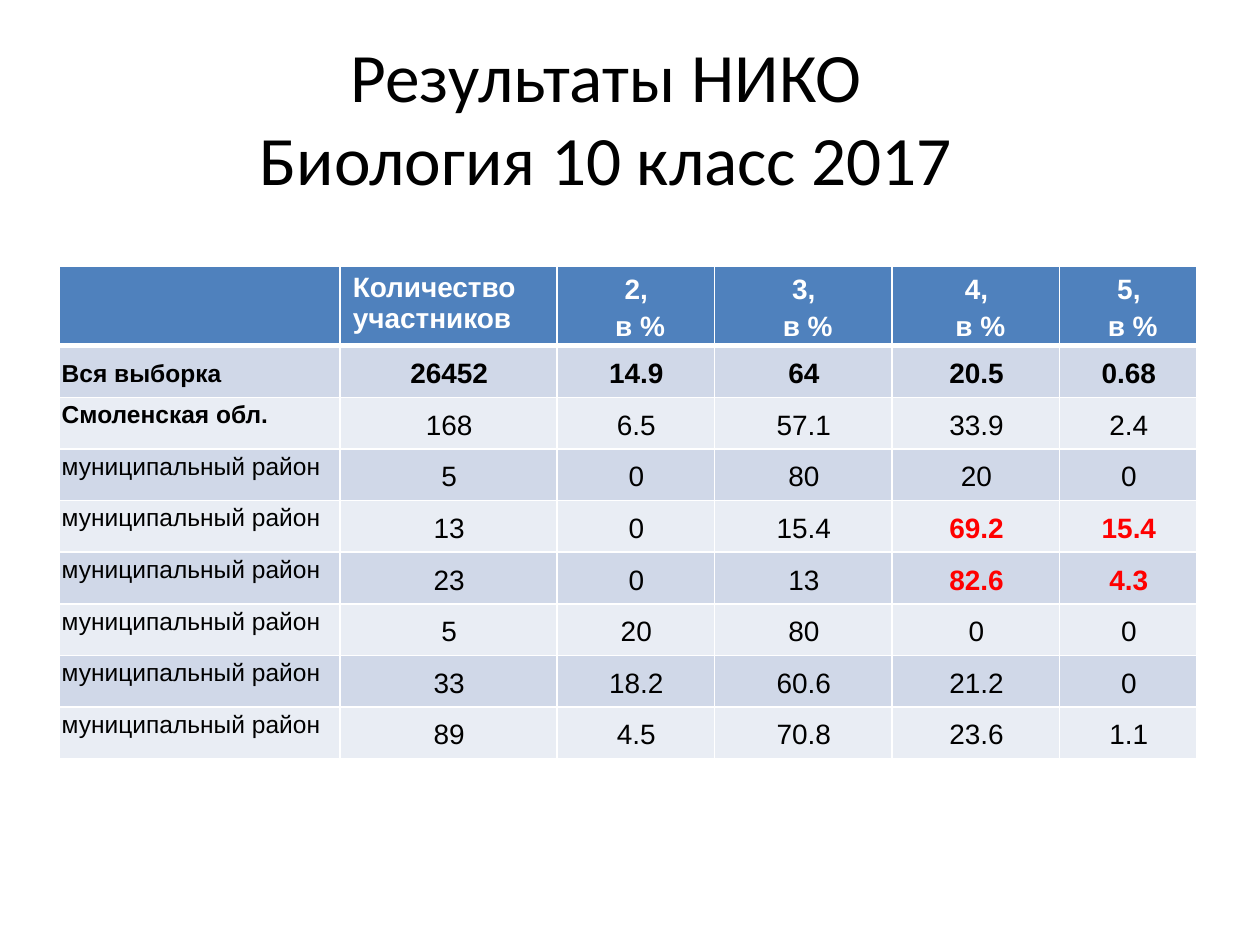
from lxml import etree
from pptx import Presentation
from pptx.dml.color import RGBColor
from pptx.enum.text import MSO_ANCHOR, PP_ALIGN
from pptx.oxml.ns import qn
from pptx.util import Inches, Pt

BLACK = RGBColor(0, 0, 0)
WHITE = RGBColor(255, 255, 255)
RED = RGBColor(255, 0, 0)
BLUE = RGBColor(0x4F, 0x81, 0xBD)
BAND_DARK = RGBColor(0xD0, 0xD8, 0xE8)
BAND_LIGHT = RGBColor(0xE9, 0xED, 0xF4)

DISTRICT = "муниципальный район"
COL_WIDTHS = [2.23, 1.72, 1.25, 1.41, 1.33, 1.09]
ROW_HEIGHT = 0.41
HEADER = ["", "Количество участников"] + [f"{grade},\n в %" for grade in range(2, 6)]
ROWS = [
    ["Вся выборка", "26452", "14.9", "64", "20.5", "0.68"],
    ["Смоленская обл.", "168", "6.5", "57.1", "33.9", "2.4"],
    [DISTRICT, "5", "0", "80", "20", "0"],
    [DISTRICT, "13", "0", "15.4", "69.2", "15.4"],
    [DISTRICT, "23", "0", "13", "82.6", "4.3"],
    [DISTRICT, "5", "20", "80", "0", "0"],
    [DISTRICT, "33", "18.2", "60.6", "21.2", "0"],
    [DISTRICT, "89", "4.5", "70.8", "23.6", "1.1"],
]
RED_CELLS = {(4, 4), (4, 5), (5, 4), (5, 5)}


def add_run(p, text, size, font, color, bold=False):
    """Add one formatted run to a paragraph."""
    r = p.add_run()
    r.text = text
    r.font.size = Pt(size)
    r.font.name = font
    r.font.bold = bold
    r.font.color.rgb = color


def set_borders(cell, bottom):
    """Draw white borders, with the bottom one of the given width in points."""
    tcPr = cell._tc.get_or_add_tcPr()
    for side, width in (("L", 1), ("R", 1), ("T", 1), ("B", bottom)):
        ln = etree.SubElement(tcPr, qn(f"a:ln{side}"), w=str(Pt(width)))
        fill = etree.SubElement(ln, qn("a:solidFill"))
        etree.SubElement(fill, qn("a:srgbClr"), val=str(WHITE))


def fill_cell(cell, row, col, text):
    """Style and fill one table cell according to its row and column."""
    header, label = row == 0, col == 0
    set_borders(cell, 3 if header else 1)
    cell.fill.solid()
    cell.fill.fore_color.rgb = BLUE if header else BAND_DARK if row % 2 else BAND_LIGHT
    if not text:
        return
    plain = header and col == 1
    red = (row, col) in RED_CELLS
    color = WHITE if header else RED if red else BLACK
    bold = row < 2 or red or (row == 2 and label)
    if not plain:
        cell.margin_left = cell.margin_right = Inches(0.01)
        cell.margin_top = cell.margin_bottom = 0
    top = plain or (label and row > 1)
    cell.vertical_anchor = MSO_ANCHOR.TOP if top else MSO_ANCHOR.MIDDLE
    tf = cell.text_frame
    for i, line in enumerate(text.split("\n")):
        p = tf.add_paragraph() if i else tf.paragraphs[0]
        p.alignment = PP_ALIGN.LEFT if plain or label else PP_ALIGN.CENTER
        if not plain:
            p.line_spacing = 1.15
            p.space_before = Pt(0.7)
            p._p.get_or_add_pPr().set("marL", str(Inches(0.01)))
        add_run(p, line, 14 if label else 16, "Arial", color, bold)


def add_title(s, left, top, width, height):
    """Place the two-line slide title in the given box."""
    tf = s.shapes.add_textbox(left, top, width, height).text_frame
    tf.word_wrap = True
    tf.vertical_anchor = MSO_ANCHOR.MIDDLE
    p = tf.paragraphs[0]
    p._p.get_or_add_pPr().set("marR", str(Inches(0.38)))
    for p, text in ((p, "Результаты НИКО"), (tf.add_paragraph(), "Биология 10 класс 2017")):
        p.alignment = PP_ALIGN.CENTER
        add_run(p, text, 39.6, "Calibri", BLACK)


def add_results(s, left, top, width, height):
    """Place the results table in the given box."""
    data = [HEADER] + ROWS
    table = s.shapes.add_table(len(data), len(HEADER), left, top, width, height).table
    for column, col_width in zip(table.columns, COL_WIDTHS):
        column.width = Inches(col_width)
    for i, values in enumerate(data):
        table.rows[i].height = Inches(ROW_HEIGHT)
        for j, text in enumerate(values):
            fill_cell(table.cell(i, j), i, j, text)


def main():
    """Build the slide and save it."""
    prs = Presentation()
    prs.slide_width, prs.slide_height = Inches(10), Inches(7.5)
    s = prs.slides.add_slide(prs.slide_layouts[6])
    add_title(s, Inches(0.5), Inches(0.3), Inches(9), Inches(1.25))
    add_results(s, Inches(0.47), Inches(2.11), Inches(9.03), Inches(3.89))
    prs.save("out.pptx")


if __name__ == "__main__":
    main()
